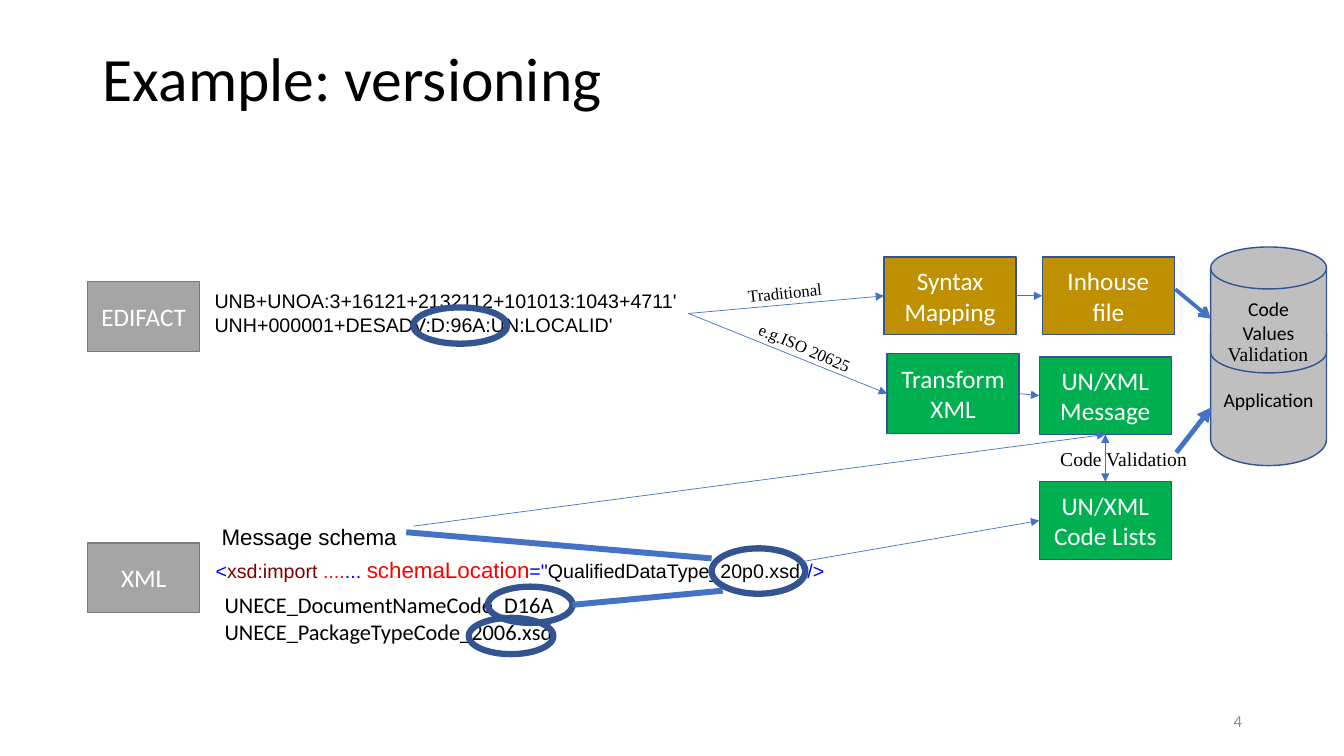
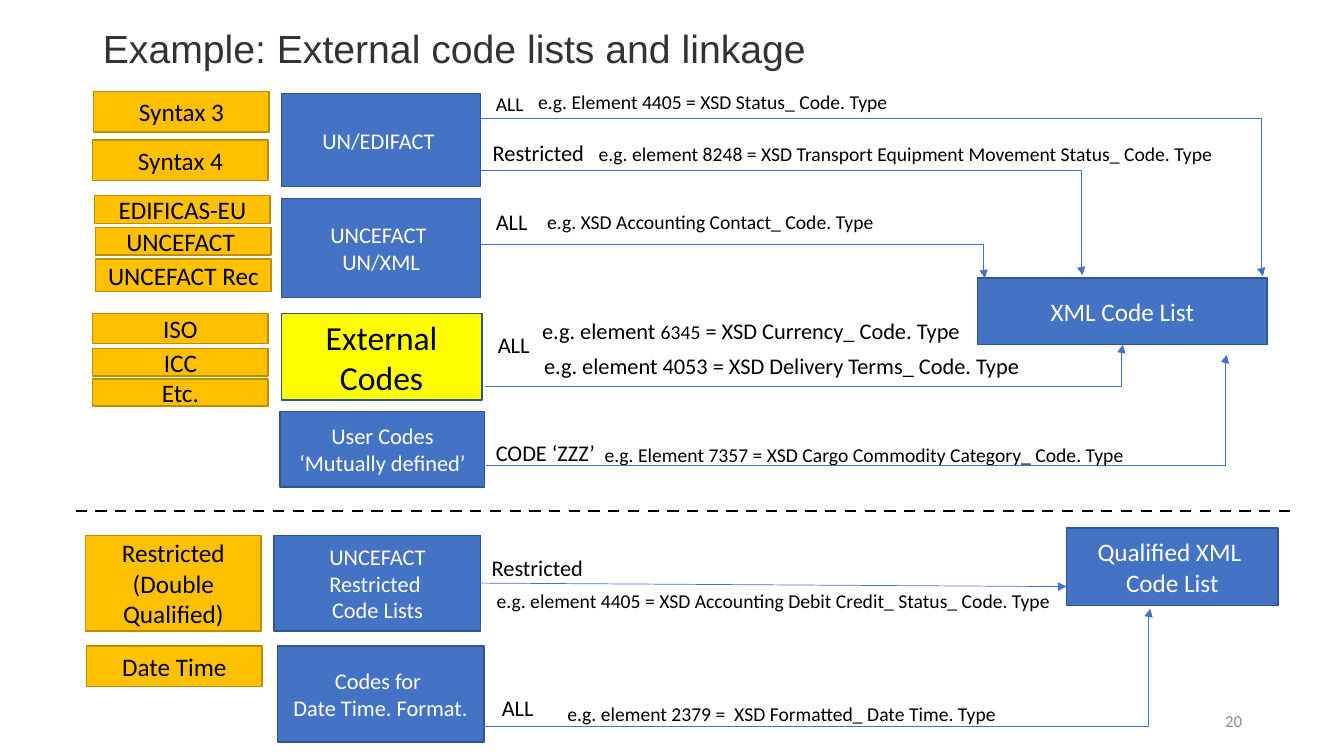
from lxml.etree import SubElement
from pptx import Presentation
from pptx.dml.color import RGBColor
from pptx.enum.dml import MSO_LINE
from pptx.enum.shapes import MSO_CONNECTOR, MSO_SHAPE
from pptx.enum.text import MSO_ANCHOR, PP_ALIGN
from pptx.oxml.ns import qn
from pptx.util import Inches, Pt

HUE = {
    "ink": "000000", "white": "FFFFFF", "title": "333333", "note": "8C8C8C",
    "blue": "4472C4", "navy": "325491", "grey": "A5A5A5", "edge": "7A7A7A",
    "silver": "BFBFBF", "ochre": "BF9000", "green": "00B050",
    "gold": "FFC000", "rim": "BD8E00", "yellow": "FFFF00",
    "tag": "0000FF", "name": "800000", "red": "FF0000",
}
HUE = {key: RGBColor.from_string(code) for key, code in HUE.items()}
CELL = Inches(0.1)  # grid of 133.33 columns and 75 rows
RECT, DISK, RING = MSO_SHAPE.RECTANGLE, MSO_SHAPE.FLOWCHART_MAGNETIC_DISK, MSO_SHAPE.OVAL


def box(slide, at, text, size=18, font="Calibri", ink="ink",
        fill=None, edge="navy", form=RECT):
    """Add a filled shape with centred text, or a plain label if there is no fill."""
    place = [int(n * CELL) for n in at]
    if fill:
        item = slide.shapes.add_shape(form, *place)
        item.shadow.inherit = False
        item.fill.solid()
        item.fill.fore_color.rgb = HUE[fill]
        item.line.color.rgb = HUE[edge]
        item.line.width = Pt(1)
    else:
        item = slide.shapes.add_textbox(*place)
    frame = item.text_frame
    frame.word_wrap = bool(fill)
    frame.vertical_anchor = MSO_ANCHOR.MIDDLE if fill else MSO_ANCHOR.TOP
    frame.text = text
    for para in frame.paragraphs:
        para.alignment = PP_ALIGN.CENTER if fill else PP_ALIGN.LEFT
        para.font.size, para.font.name = Pt(size), font
        para.font.color.rgb = HUE[ink]
    return item


def link(slide, start, end, width=0.5, heads=("", "triangle"), hue="blue", bent=False):
    """Join two ends; each is a grid point or a (shape, side) pair."""
    points = []
    for spot, side in (start, end):
        if hasattr(spot, "left"):
            points += [spot.left, spot.top]
        else:
            points += [int(spot * CELL), int(side * CELL)]
    kind = MSO_CONNECTOR.ELBOW if bent else MSO_CONNECTOR.STRAIGHT
    line = slide.shapes.add_connector(kind, *points)
    if hasattr(start[0], "left"):
        line.begin_connect(*start)
    if hasattr(end[0], "left"):
        line.end_connect(*end)
    line.line.color.rgb = HUE[hue]
    line.line.width = Pt(width)
    props = line.element.spPr
    for tag, head in zip(("a:headEnd", "a:tailEnd"), heads):
        if head:
            SubElement(props.find(qn("a:ln")), qn(tag), type=head)
    SubElement(props, qn("a:effectLst"))
    if bent:
        guides = props.find(qn("a:prstGeom")).get_or_add_avLst()
        SubElement(guides, qn("a:gd"), name="adj1", fmla="val 99800")
    return line


deck = Presentation()
deck.slide_width, deck.slide_height = int(133.33 * CELL), 75 * CELL

pages = []
for text, top, high, size, font, ink, page in [
    ("Example: versioning", 4, 8.2, 44, "Calibri", "ink", "4"),
    ("Example: External code lists and linkage", 1.9, 6.2, 28, "Arial", "title", "20"),
]:
    slide = deck.slides.add_slide(deck.slide_layouts[5])
    title = slide.shapes.title
    title.left, title.top, title.width, title.height = (
        int(n * CELL) for n in (9.2, top, 115, high))
    title.text_frame.text = text
    title.text_frame.vertical_anchor = MSO_ANCHOR.MIDDLE
    para = title.text_frame.paragraphs[0]
    para.alignment, para.line_spacing = PP_ALIGN.LEFT, 0.9
    para.font.size, para.font.name = Pt(size), font
    para.font.color.rgb = HUE[ink]
    frame = box(slide, (94.2, 69.5, 30, 4), page, 12, ink="note").text_frame
    frame.word_wrap, frame.vertical_anchor = True, MSO_ANCHOR.MIDDLE
    frame.paragraphs[0].alignment = PP_ALIGN.RIGHT
    pages.append(slide)
first, second = pages

# Versioning
for top, high, text in [(30.6, 15.6, "Application"), (24.5, 12.5, "Code Values")]:
    box(first, (120.1, top, 11.5, high), text, 14, fill="silver", form=DISK)
for top, text in [(27.95, "EDIFACT"), (53.85, "XML")]:
    box(first, (8.7, top, 11.1, 6.9), text, ink="white", fill="grey", edge="edge")
syntax, inhouse, turn, message, codes = [
    box(first, (left, top, 13.1, high), text, ink="white", fill=fill)
    for left, top, high, text, fill in [
        (87.7, 25.5, 7.7, "Syntax\nMapping", "ochre"),
        (103.4, 25.5, 7.7, "Inhouse\nfile", "ochre"),
        (88, 35.1, 7.9, "Transform\nXML", "green"),
        (103.1, 35.4, 7.7, "UN/XML\nMessage", "green"),
        (103.1, 47.8, 7.7, "UN/XML\nCode Lists", "green"),
    ]]

for at, text, size, font, turned in [
    ((20.3, 28.2, 48.1, 5.7),
     "UNB+UNOA:3+16121+2132112+101013:1043+4711'\nUNH+000001+DESADV:D:96A:UN:LOCALID'",
     14, "Arial", 0),
    ((21.3, 58.2, 40, 6.4),
     "UNECE_DocumentNameCode_D16A\nUNECE_PackageTypeCode_2006.xsd", 16, "Calibri", 0),
    ((21, 51.4, 22, 3.7), "Message schema", 16, "Arial", 0),
    ((74, 33, 11.8, 3), "e.g.ISO 20625", 12, "Times New Roman", 23.5),
    ((73.2, 27.5, 9.5, 3), "Traditional", 12, "Times New Roman", 354),
    ((104.2, 43.8, 18, 3.4), "Code Validation", 14, "Times New Roman", 0),
    ((120.8, 33.4, 10.1, 3.4), "Validation", 14, "Times New Roman", 0),
]:
    box(first, at, text, size, font).rotation = turned

para = box(first, (20.4, 54.7, 70, 3.7), "", 14, "Arial").text_frame.paragraphs[0]
for text, ink, size in [
    ("<", "tag", 14), ("xsd:import", "name", 14), (" ....", "red", 14),
    ("... ", "tag", 14), ("schemaLocation", "red", 16), ('="', "tag", 14),
    ("QualifiedDataType_20p0.xsd", "ink", 14), ('"/>', "tag", 14),
]:
    run = para.add_run()
    run.text, run.font.size, run.font.name = text, Pt(size), "Arial"
    run.font.color.rgb = HUE[ink]

for at in [(41, 30.5, 9.3, 3.6), (70.6, 54.4, 9.3, 4.5),
           (48.4, 58.2, 8.4, 3.6), (46.5, 61.3, 8.4, 3.6)]:
    ring = first.shapes.add_shape(RING, *(int(n * CELL) for n in at))
    ring.shadow.inherit = False
    ring.fill.background()
    ring.line.color.rgb, ring.line.width = HUE["navy"], Pt(4.5)

for start, end in [
    ((68.3, 31.1), (syntax, 1)), ((68.3, 31.1), (turn, 1)),
    ((syntax, 3), (inhouse, 1)), ((turn, 3), (message, 1)),
    ((41, 52.2), (message, 2)), ((79.7, 55.7), (codes, 1)),
]:
    link(first, start, end)
for start, end, width, heads in [
    ((message, 2), (codes, 0), 0.5, ("triangle", "triangle")),
    ((56.8, 60), (71.7, 58.6), 4.25, ("", "")),
    ((40.3, 52.8), (70.6, 55.4), 4.25, ("", "")),
    ((116.6, 28.7), (120.1, 31.6), 2.75, ("", "arrow")),
    ((116.7, 44.9), (120.2, 40.4), 3.5, ("", "triangle")),
]:
    link(first, start, end, width, heads)

# External code lists
for left, top, high, text in [
    (9.3, 9.1, 4, "Syntax 3"), (9.2, 13.9, 4, "Syntax 4"),
    (9.4, 19.4, 2.8, "EDIFICAS-EU"), (9.5, 22.6, 2.7, "UNCEFACT "),
    (9.5, 25.7, 3.2, "UNCEFACT Rec"), (9.2, 31.1, 3, "ISO"),
    (9.2, 34.6, 2.7, "ICC"), (9.2, 37.6, 2.7, "Etc."),
    (8.5, 53.1, 9.5, "Restricted\n(Double\nQualified)"), (8.6, 64.1, 4, "Date Time"),
]:
    box(second, (left, top, 17.4, high), text, fill="gold", edge="rim")

for at, text, size in [
    ((97, 27.6, 28.7, 6.6), "XML Code List", 18),
    ((105.8, 52.4, 21, 7.7), "Qualified XML \nCode List", 18),
    ((27.9, 9.3, 19.8, 9.2), "UN/EDIFACT ", 16),
    ((27.9, 19.7, 19.8, 9.8), "UNCEFACT \nUN/XML", 16),
    ((27.8, 40.8, 20.3, 7.5), "User Codes\n‘Mutually defined’", 16),
    ((27.5, 64.1, 20.5, 9.5), "Codes for \nDate Time. Format.", 16),
]:
    box(second, at, text, size, ink="white", fill="blue")
box(second, (27.9, 31.1, 19.9, 8.6), "External Codes", 24, fill="yellow")
limits = box(second, (27.2, 53.1, 20.5, 9.5), "UNCEFACT\nRestricted \nCode Lists",
             16, ink="white", fill="blue")

for left, top, wide, size, text in [
    (48.2, 8.6, 6, 14, "ALL"), (48.2, 20.2, 6, 16, "ALL"),
    (48.4, 32.4, 6, 16, "ALL"), (48.8, 68.4, 6, 16, "ALL"),
    (47.9, 13.3, 13, 16, "Restricted"), (47.8, 54.5, 13, 16, "Restricted"),
    (48.2, 43.1, 16, 16, "CODE ‘ZZZ’"),
    (52.4, 8.4, 44, 14, "e.g. Element 4405 = XSD Status_ Code. Type"),
    (58.4, 13.6, 68, 14,
     "e.g. element 8248 = XSD Transport Equipment Movement Status_ Code. Type"),
    (53.3, 20.3, 40, 14, "e.g. XSD Accounting Contact_ Code. Type"),
    (53, 34.4, 54, 16, "e.g. element 4053 = XSD Delivery Terms_ Code. Type"),
    (59, 43.4, 60, 14, "e.g. Element 7357 = XSD Cargo Commodity Category_ Code. Type"),
    (48.3, 57.9, 62, 14,
     "e.g. element 4405 = XSD Accounting Debit Credit_ Status_ Code. Type"),
    (55.3, 69.1, 50, 14, "e.g. element 2379 =  XSD Formatted_ Date Time. Type"),
]:
    label = box(second, (left, top, wide, 3.7 if size == 16 else 3.4), text, size)
    label.text_frame.word_wrap = True

para = box(second, (52.8, 31, 43.6, 3.7), "", 16).text_frame.paragraphs[0]
for text, size in [("e.g. element ", 16), ("6345", 14), (" = XSD Currency_ Code. Type", 16)]:
    run = para.add_run()
    run.text, run.font.size, run.font.name = text, Pt(size), "Calibri"

for start, end in [
    ((47.7, 11.7), (125.3, 27.4)), ((47.7, 16.9), (107.4, 27.3)),
    ((47.7, 24.2), (97.7, 27.6)), ((48.1, 38.3), (111.4, 34.2)),
    ((48.2, 46.2), (121.7, 35.2)), ((47.9, 72.1), (114.1, 60.4)),
]:
    link(second, start, end, bent=True)
link(second, (limits, 3), (105.8, 58.2))
rule = link(second, (7.5, 50.7), (128.4, 50.7), 2, ("", ""), "ink")
rule.line.dash_style = MSO_LINE.DASH

deck.save("out.pptx")
